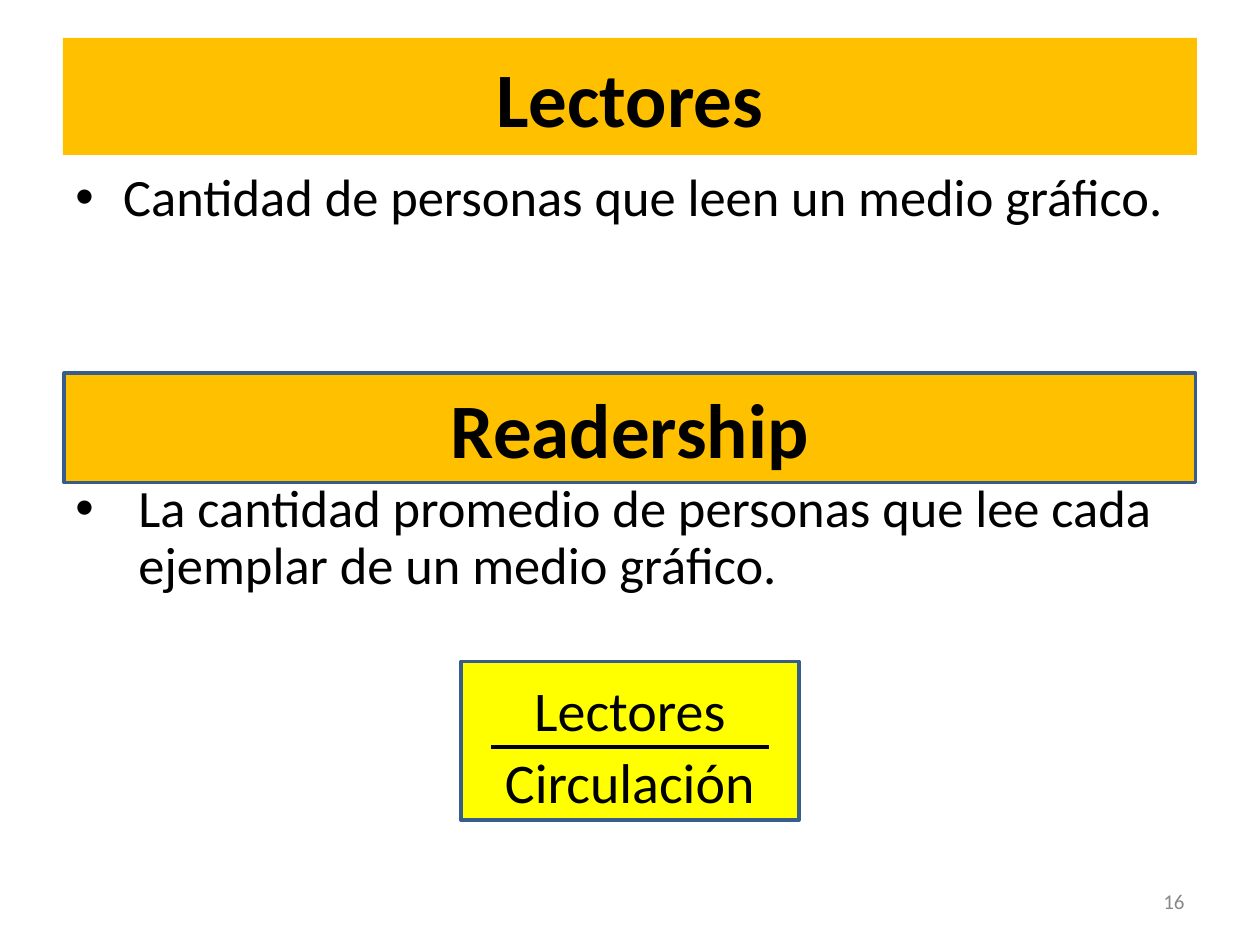
import pptx
import pptx.util
import pptx.dml.color
import pptx.enum.shapes
import pptx.enum.text
import lxml.etree
from dataclasses import dataclass
from pptx.oxml.ns import qn

Inches = pptx.util.Inches
Pt = pptx.util.Pt
RGB = pptx.dml.color.RGBColor.from_string
Align = pptx.enum.text.PP_ALIGN
Anchor = pptx.enum.text.MSO_ANCHOR


@dataclass(frozen=True)
class Theme:
    font: str = "Calibri"
    ink: str = "000000"
    muted: str = "898989"
    banner: str = "FFC000"
    formula: str = "FFFF00"
    border: str = "385D8A"
    heading: int = 44
    body: int = 30
    large: int = 32
    number: int = 12
    line_spacing: float = 0.9


THEME = Theme()


def style(span, size, color=THEME.ink, bold=False):
    span.font.name = THEME.font
    span.font.size = Pt(size)
    span.font.bold = bold
    span.font.color.rgb = RGB(color)


def add_panel(page, box, fill, border=None):
    panel = page.shapes.add_shape(pptx.enum.shapes.MSO_SHAPE.RECTANGLE, *map(Inches, box))
    panel.shadow.inherit = False
    panel.fill.solid()
    panel.fill.fore_color.rgb = RGB(fill)
    if border:
        panel.line.color.rgb = RGB(border)
        panel.line.width = Pt(2)
    else:
        panel.line.fill.background()
    frame = panel.text_frame
    frame.word_wrap = True
    frame.vertical_anchor = Anchor.MIDDLE
    return frame


def add_text_frame(page, box):
    frame = page.shapes.add_textbox(*map(Inches, box)).text_frame
    frame.word_wrap = True
    return frame


def add_banner(page, box, title, border=None):
    para = add_panel(page, box, THEME.banner, border).paragraphs[0]
    para.text = title
    para.alignment = Align.CENTER
    style(para.runs[0], THEME.heading, bold=True)


def add_definition(page, box, text, indent):
    """Place one bulleted paragraph with a hanging indent in inches."""
    para = add_text_frame(page, box).paragraphs[0]
    para.text = text
    para.line_spacing = THEME.line_spacing
    style(para.runs[0], THEME.body)
    properties = para._p.get_or_add_pPr()
    properties.set("marL", str(Inches(indent)))
    properties.set("indent", str(-Inches(indent)))
    lxml.etree.SubElement(properties, qn("a:buFont"), typeface="Arial")
    lxml.etree.SubElement(properties, qn("a:buChar"), char="•")


def add_formula(page, box, numerator, denominator):
    """Place a fraction in a bordered box, with its bar just below the middle."""
    left, top, width, height = box
    frame = add_panel(page, box, THEME.formula, THEME.border)
    frame.margin_top = Inches(0.19)
    frame.text = f"{numerator}\n{denominator}"
    for para in frame.paragraphs:
        para.alignment = Align.CENTER
        para.line_spacing = THEME.line_spacing
        style(para.runs[0], THEME.large)
    frame.paragraphs[1].space_before = Pt(6.4)

    margin, bar_y = 0.24, top + height / 2 + 0.05
    bar = page.shapes.add_connector(
        pptx.enum.shapes.MSO_CONNECTOR.STRAIGHT,
        Inches(left + margin), Inches(bar_y), Inches(left + width - margin), Inches(bar_y))
    bar.line.color.rgb = RGB(THEME.ink)
    bar.line.width = Pt(2.25)
    lxml.etree.SubElement(bar._element.spPr, qn("a:effectLst"))


def add_page_number(page, box, number):
    frame = add_text_frame(page, box)
    frame.vertical_anchor = Anchor.MIDDLE
    para = frame.paragraphs[0]
    para.text = number
    para.alignment = Align.RIGHT
    style(para.runs[0], THEME.number, THEME.muted)


def main():
    deck = pptx.Presentation()
    deck.slide_width, deck.slide_height = Inches(10), Inches(7.5)
    page = deck.slides.add_slide(deck.slide_layouts[6])
    left, width = 0.5, 9

    add_banner(page, (left, 0.3, width, 0.93), "Lectores")
    add_definition(page, (left, 1.31, width, 0.6),
                   "Cantidad de personas que leen un medio gráfico.", 0.38)
    add_banner(page, (0.51, 2.96, 8.98, 0.87), "Readership", THEME.border)
    add_definition(page, (left, 3.78, width, 1.1),
                   "La cantidad promedio de personas que lee cada ejemplar de un medio gráfico.", 0.5)
    add_formula(page, (3.66, 5.25, 2.68, 1.26), "Lectores", "Circulación")
    add_page_number(page, (7.17, 6.95, 2.33, 0.4), "16")
    deck.save("out.pptx")


if __name__ == "__main__":
    main()
